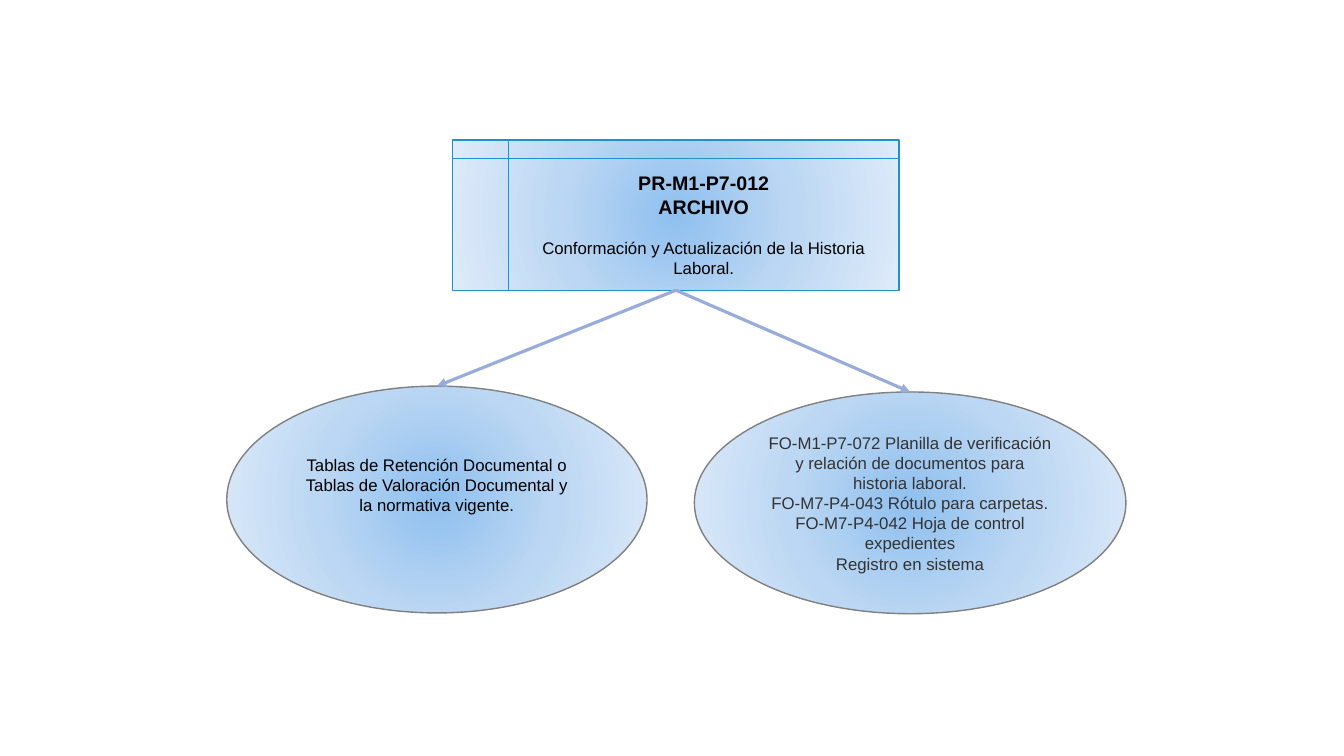
import pptx
import pptx.dml.color
import pptx.enum.shapes
import pptx.enum.text
import pptx.oxml
import pptx.oxml.ns
import pptx.util

Pt = pptx.util.Pt
SHAPES = pptx.enum.shapes.MSO_SHAPE
COLORS = {
    "center": "8FC0EF",
    "middle": "BCD7F3",
    "edge": "DEEBF9",
    "box_line": "2191C9",
    "ellipse_line": "808080",
    "arrow": "97ACD9",
    "black": "000000",
    "gray": "333333",
}


def color(name):
    """Return the named colour."""
    return pptx.dml.color.RGBColor.from_string(COLORS[name])


def fill_radial(shape):
    """Fill a shape with the circular blue gradient."""
    stops = "".join(
        f'<a:gs pos="{position}"><a:srgbClr val="{COLORS[name]}"/></a:gs>'
        for position, name in ((0, "center"), (50000, "middle"), (100000, "edge"))
    )
    gradient = pptx.oxml.parse_xml(
        f'<a:gradFill {pptx.oxml.ns.nsdecls("a")} rotWithShape="1"><a:gsLst>{stops}</a:gsLst>'
        '<a:path path="circle"><a:fillToRect l="50000" t="50000" r="50000" b="50000"/>'
        "</a:path></a:gradFill>"
    )
    shape.fill.gradient()
    properties = shape._element.spPr
    properties.replace(properties.find(pptx.oxml.ns.qn("a:gradFill")), gradient)


def add_node(slide, preset, box, text, line_color, text_color):
    """Add a gradient shape with centred text in the given box."""
    shape = slide.shapes.add_shape(preset, *(Pt(length) for length in box))
    shape.shadow.inherit = False
    fill_radial(shape)
    shape.line.color.rgb = color(line_color)
    shape.line.width = Pt(1)
    frame = shape.text_frame
    frame.word_wrap = True
    frame.vertical_anchor = pptx.enum.text.MSO_ANCHOR.MIDDLE
    frame.text = text
    for paragraph in frame.paragraphs:
        paragraph.alignment = pptx.enum.text.PP_ALIGN.CENTER
        for run in paragraph.runs:
            run.font.name = "Arial"
            run.font.size = Pt(12)
            run.font.color.rgb = color(text_color)
    return shape


def add_procedure(slide, box):
    """Add the procedure box with its bold heading and description."""
    shape = add_node(
        slide, SHAPES.FLOWCHART_INTERNAL_STORAGE, box,
        "PR-M1-P7-012\nARCHIVO\nConformación y Actualización de la Historia Laboral.",
        "box_line", "black",
    )
    *headings, description = shape.text_frame.paragraphs
    for paragraph in headings:
        paragraph.runs[0].font.size = Pt(14)
        paragraph.runs[0].font.bold = True
    description.space_before = Pt(14)
    return shape


def add_rules(slide, box):
    """Add the ellipse naming the applicable rules, its text slightly raised."""
    shape = add_node(
        slide, SHAPES.OVAL, box,
        "Tablas de Retención Documental o Tablas de Valoración Documental "
        "y la normativa vigente.",
        "ellipse_line", "black",
    )
    shape.text_frame.margin_bottom = Pt(25)
    return shape


def add_forms(slide, box):
    """Add the ellipse listing the forms and records."""
    return add_node(
        slide, SHAPES.OVAL, box,
        "FO-M1-P7-072 Planilla de verificación y relación de documentos "
        "para historia laboral.\v"
        "FO-M7-P4-043 Rótulo para carpetas.\v"
        "FO-M7-P4-042 Hoja de control expedientes\v"
        "Registro en sistema",
        "ellipse_line", "gray",
    )


def add_arrow(slide, source, target):
    """Connect the bottom of the source to the top of the target."""
    arrow = slide.shapes.add_connector(
        pptx.enum.shapes.MSO_CONNECTOR.STRAIGHT, 0, 0, 0, 0
    )
    arrow.begin_connect(source, 2)
    arrow.end_connect(target, 0)
    arrow.line.color.rgb = color("arrow")
    arrow.line.width = Pt(2.25)
    namespace = pptx.oxml.ns.nsdecls("a")
    arrow.line._get_or_add_ln().append(
        pptx.oxml.parse_xml(f'<a:tailEnd {namespace} type="triangle"/>')
    )
    arrow._element.spPr.append(pptx.oxml.parse_xml(f"<a:effectLst {namespace}/>"))


def main():
    """Build and save the presentation."""
    presentation = pptx.Presentation()
    presentation.slide_width = Pt(960)
    presentation.slide_height = Pt(540)
    slide = presentation.slides.add_slide(presentation.slide_layouts[6])
    procedure = add_procedure(slide, (323.3, 100, 319, 107.3))
    rules = add_rules(slide, (162, 275.8, 300.2, 162))
    forms = add_forms(slide, (496, 280, 308.2, 158.4))
    for target in (rules, forms):
        add_arrow(slide, procedure, target)
    presentation.save("out.pptx")


if __name__ == "__main__":
    main()
